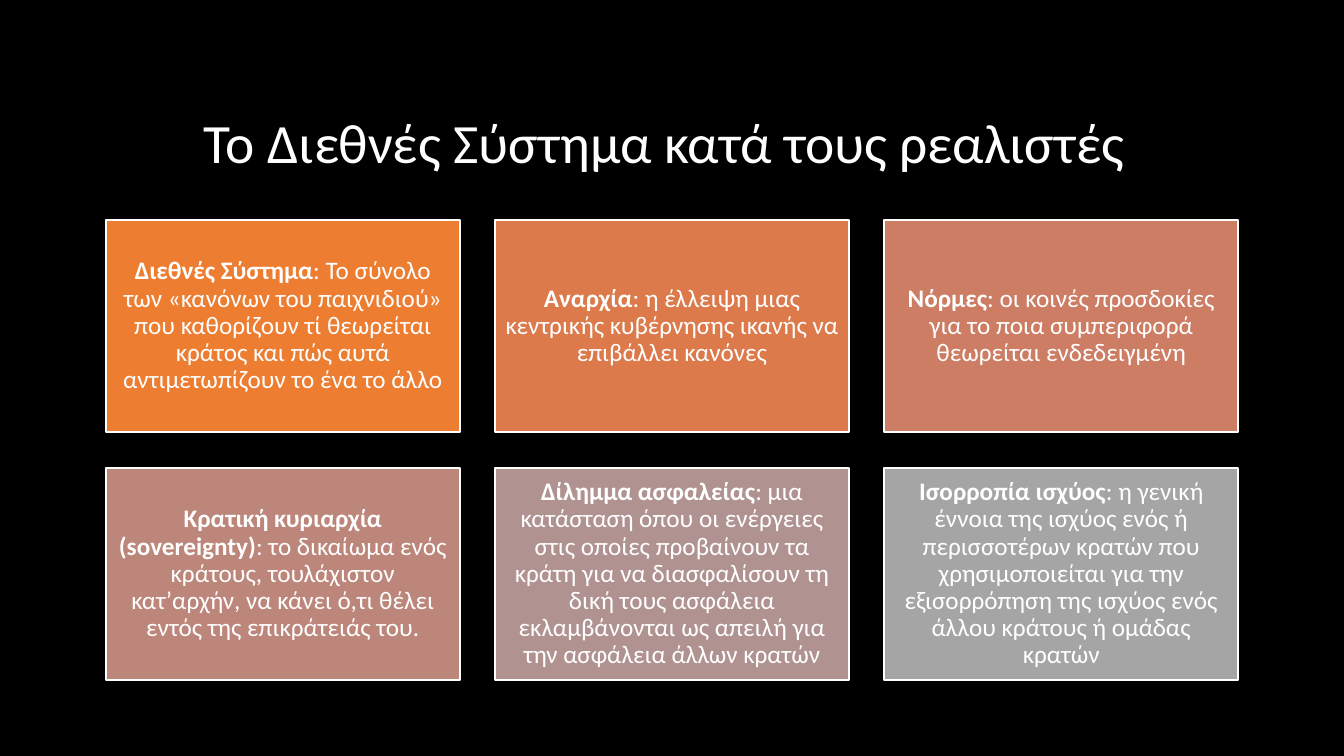
"""Build a slide of six key terms of the realist view of the international system."""
import pptx
import pptx.util
import pptx.dml.color
import pptx.enum.shapes
import pptx.enum.text

Inches = pptx.util.Inches
Pt = pptx.util.Pt


def color(hex_value):
    return pptx.dml.color.RGBColor.from_string(hex_value)


def format_run(run, size, bold=False):
    run.font.name = "Calibri"
    run.font.size = Pt(size)
    run.font.bold = bold
    run.font.color.rgb = color("FFFFFF")


terms = [
    ("Διεθνές Σύστημα", ": Το σύνολο των «κανόνων του παιχνιδιού» που καθορίζουν τί θεωρείται "
     "κράτος και πώς αυτά αντιμετωπίζουν το ένα το άλλο", "ED7D31"),
    ("Αναρχία", ": η έλλειψη μιας κεντρικής κυβέρνησης ικανής να επιβάλλει κανόνες", "DC7A4B"),
    ("Νόρμες", ": οι κοινές προσδοκίες για το ποια συμπεριφορά θεωρείται ενδεδειγμένη", "CC7D64"),
    ("Κρατική κυριαρχία (sovereignty)", ": το δικαίωμα ενός κράτους, τουλάχιστον κατ’αρχήν, "
     "να κάνει ό,τι θέλει εντός της επικράτειάς του.", "BD867B"),
    ("Δίλημμα ασφαλείας", ": μια κατάσταση όπου οι ενέργειες στις οποίες προβαίνουν τα κράτη "
     "για να διασφαλίσουν τη δική τους ασφάλεια εκλαμβάνονται ως απειλή για την ασφάλεια "
     "άλλων κρατών", "B09391"),
    ("Ισορροπία ισχύος", ": η γενική έννοια της ισχύος ενός ή περισσοτέρων κρατών που "
     "χρησιμοποιείται για την εξισορρόπηση της ισχύος ενός άλλου κράτους ή ομάδας κρατών",
     "A5A5A5"),
]

presentation = pptx.Presentation()
presentation.slide_width = Inches(13.33)
presentation.slide_height = Inches(7.5)
slide = presentation.slides.add_slide(presentation.slide_layouts[5])
slide.background.fill.solid()
slide.background.fill.fore_color.rgb = color("000000")

title = slide.shapes.title
title.left, title.top = Inches(1.92), Inches(0.87)
title.width, title.height = Inches(9.49), Inches(1.15)
title.text_frame.text = "Το Διεθνές Σύστημα κατά τους ρεαλιστές"
title.text_frame.vertical_anchor = pptx.enum.text.MSO_ANCHOR.MIDDLE
title_paragraph = title.text_frame.paragraphs[0]
title_paragraph.alignment = pptx.enum.text.PP_ALIGN.LEFT
title_paragraph.line_spacing = 0.9
format_run(title_paragraph.runs[0], 39.6)

columns = 3
grid_left, grid_top = 1.05, 2.18
box_width, box_height, gap = 3.51, 2.11, 0.35

for index, (term, definition, fill) in enumerate(terms):
    row, column = divmod(index, columns)
    box = slide.shapes.add_shape(
        pptx.enum.shapes.MSO_SHAPE.RECTANGLE,
        Inches(grid_left + column * (box_width + gap)),
        Inches(grid_top + row * (box_height + gap)),
        Inches(box_width), Inches(box_height))
    box.shadow.inherit = False
    box.fill.solid()
    box.fill.fore_color.rgb = color(fill)
    box.line.color.rgb = color("FFFFFF")
    box.line.width = Pt(1.5)
    frame = box.text_frame
    frame.word_wrap = True
    frame.vertical_anchor = pptx.enum.text.MSO_ANCHOR.MIDDLE
    frame.margin_left = frame.margin_right = Inches(0.08)
    frame.margin_top = frame.margin_bottom = Inches(0.07)
    paragraph = frame.paragraphs[0]
    paragraph.alignment = pptx.enum.text.PP_ALIGN.CENTER
    paragraph.line_spacing = 0.9
    for text, bold in ((term, True), (definition, False)):
        run = paragraph.add_run()
        run.text = text
        format_run(run, 18, bold)

presentation.save("out.pptx")
